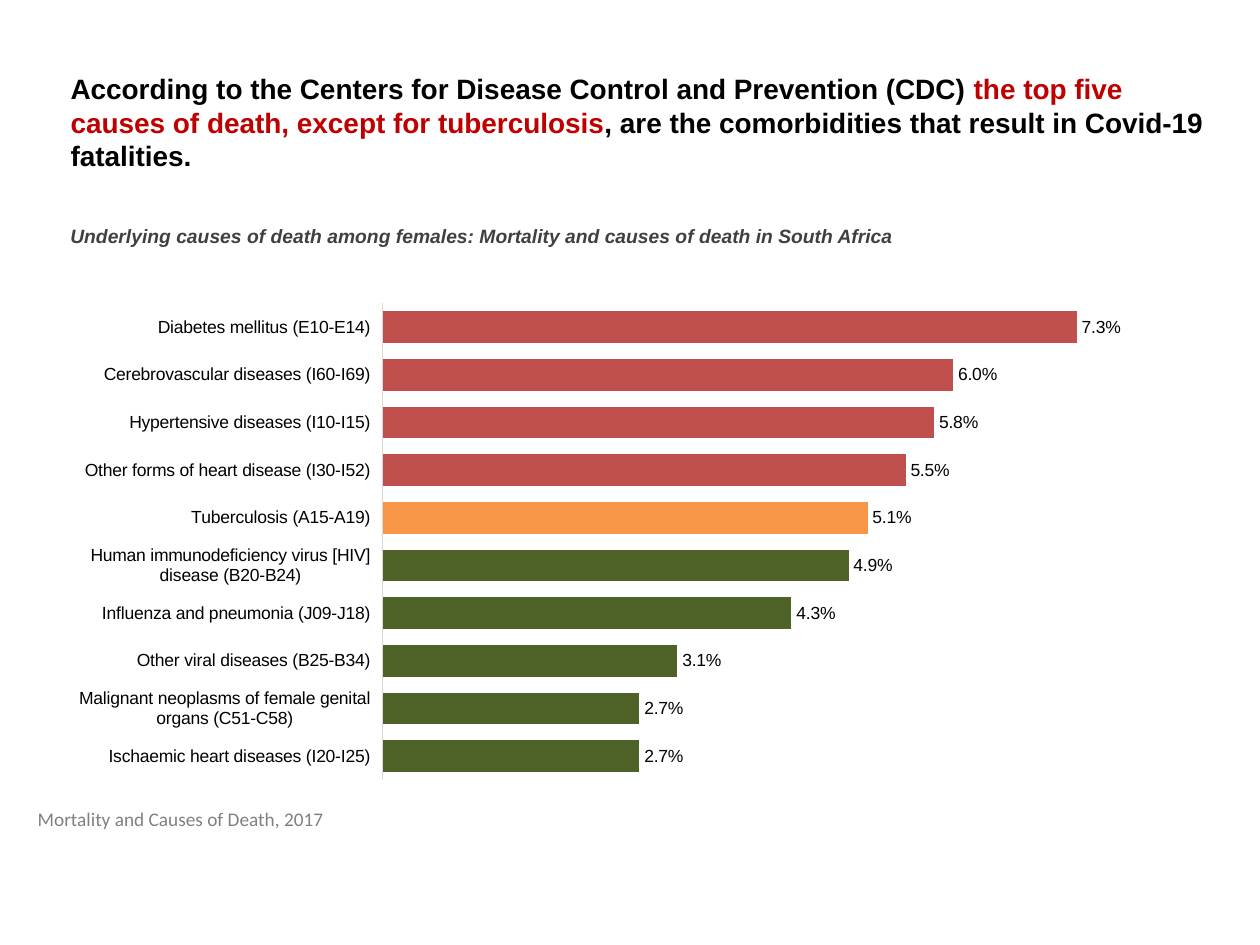
"""Build a slide on the leading causes of death among females in South Africa."""
from lxml.etree import SubElement
from pptx import Presentation
from pptx.chart.data import CategoryChartData
from pptx.dml.color import RGBColor
from pptx.enum.chart import XL_CHART_TYPE, XL_LABEL_POSITION, XL_TICK_LABEL_POSITION, XL_TICK_MARK
from pptx.enum.text import MSO_ANCHOR, MSO_AUTO_SIZE, PP_ALIGN
from pptx.oxml.ns import qn
from pptx.util import Inches, Pt


def paint(target, color):
    target.rgb = RGBColor.from_string(color)


def write(box, spans, wrap=True, **formats):
    frame = box.text_frame
    frame.word_wrap = wrap
    frame.auto_size = MSO_AUTO_SIZE.NONE
    frame.vertical_anchor = MSO_ANCHOR.TOP
    para = frame.paragraphs[0]
    para.alignment = PP_ALIGN.LEFT
    for text, color in spans:
        span = para.add_run()
        span.text = text
        for name, value in formats.items():
            setattr(span.font, name, value)
        paint(span.font.color, color)


RED, ORANGE, GREEN = "C0504D", "F79646", "4F6228"
causes = [
    ("Diabetes mellitus (E10-E14)", 7.3, RED),
    ("Cerebrovascular diseases (I60-I69)", 6.0, RED),
    ("Hypertensive diseases (I10-I15)", 5.8, RED),
    ("Other forms of heart disease (I30-I52)", 5.5, RED),
    ("Tuberculosis (A15-A19)", 5.1, ORANGE),
    ("Human immunodeficiency virus [HIV] disease (B20-B24)", 4.9, GREEN),
    ("Influenza and pneumonia (J09-J18)", 4.3, GREEN),
    ("Other viral diseases (B25-B34)", 3.1, GREEN),
    ("Malignant neoplasms of female genital organs (C51-C58)", 2.7, GREEN),
    ("Ischaemic heart diseases (I20-I25)", 2.7, GREEN),
]

deck = Presentation()
deck.slide_width, deck.slide_height = Inches(10), Inches(7.5)
page = deck.slides.add_slide(deck.slide_layouts[5])
margin, line_height = Inches(0.46), Inches(0.29)

title = page.shapes.title
title.left, title.top, title.width, title.height = margin, Inches(0.52), Inches(9.32), Inches(0.91)
write(title, [
    ("According to the Centers for Disease Control and Prevention (CDC) ", "000000"),
    ("the top five causes of death, except for tuberculosis", "C00000"),
    (", are the comorbidities that result in Covid-19 fatalities.", "000000"),
], name="Arial", size=Pt(16), bold=True)

subtitle = page.shapes.add_textbox(margin, Inches(1.73), Inches(6.97), line_height)
write(subtitle, [
    ("Underlying causes of death among females: Mortality and causes of death in South Africa", "404040"),
], name="Arial", size=Pt(11), bold=True, italic=True)

data = CategoryChartData(number_format="0.0")
data.categories = [name for name, share, color in causes]
data.add_series("Series 1", [share for name, share, color in causes])
chart = page.shapes.add_chart(
    XL_CHART_TYPE.BAR_CLUSTERED, Inches(0.5), Inches(2.33), Inches(8.75), Inches(3.94), data).chart
chart.has_legend = chart.has_title = False
chart.font.name, chart.font.size = "Arial", Pt(10)
paint(chart.font.color, "000000")

cause_axis = chart.category_axis
cause_axis.reverse_order = True
cause_axis.major_tick_mark = cause_axis.minor_tick_mark = XL_TICK_MARK.NONE
cause_axis.tick_label_position = XL_TICK_LABEL_POSITION.LOW
cause_axis.format.line.width = Pt(0.75)
paint(cause_axis.format.line.color, "D9D9D9")

share_axis = chart.value_axis
share_axis.minimum_scale, share_axis.maximum_scale = 0, 8
share_axis.has_major_gridlines = share_axis.visible = False

plot = chart.plots[0]
plot.gap_width = 50
plot.vary_by_categories = False
plot.has_data_labels = True
labels = plot.data_labels
labels.show_value = True
labels.position = XL_LABEL_POSITION.OUTSIDE_END
labels.number_format, labels.number_format_is_linked = r"0.0\%", False
for index, (name, share, color) in enumerate(causes):
    fill = plot.series[0].points[index].format.fill
    fill.solid()
    paint(fill.fore_color, color)

area = chart.element.find(".//" + qn("c:plotArea"))
layout = area.find(qn("c:layout"))
if layout is None:
    layout = area.makeelement(qn("c:layout"))
    area.insert(0, layout)
manual = SubElement(layout, qn("c:manualLayout"))
for tag, value in {"layoutTarget": "inner", "xMode": "edge", "yMode": "edge",
                   "x": 0.29, "y": 0.02, "w": 0.69, "h": 0.96}.items():
    SubElement(manual, qn(f"c:{tag}")).set("val", str(value))

source = page.shapes.add_textbox(Inches(0.2), Inches(6.36), Inches(2.49), line_height)
write(source, [("Mortality and Causes of Death, 2017", "808080")], wrap=False, name="Calibri", size=Pt(11))

deck.save("out.pptx")
